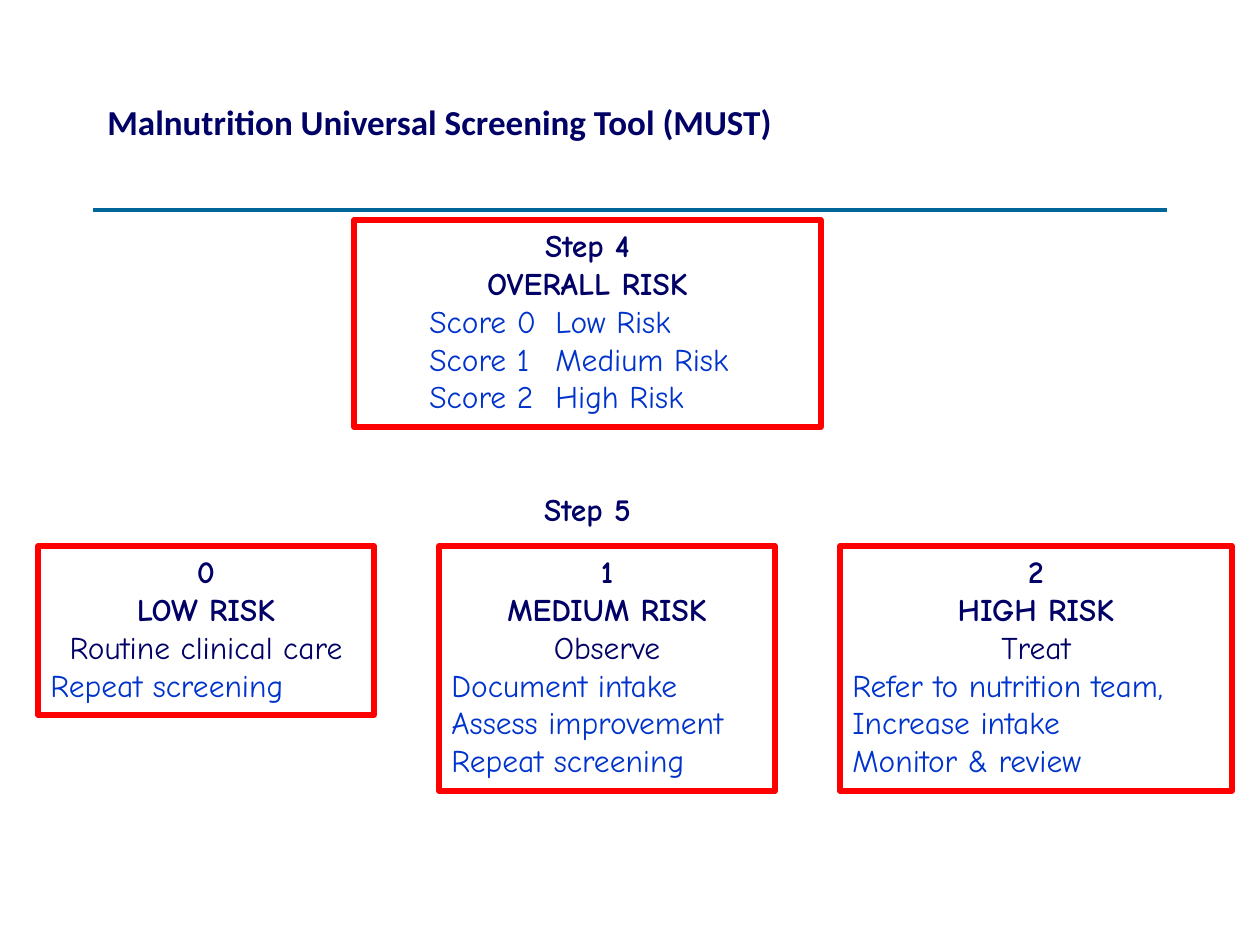
from lxml.etree import SubElement
from pptx import Presentation
from pptx.dml.color import RGBColor
from pptx.enum.shapes import MSO_CONNECTOR, MSO_SHAPE
from pptx.enum.text import MSO_ANCHOR, MSO_AUTO_SIZE, PP_ALIGN
from pptx.oxml.ns import qn
from pptx.util import Emu, Inches, Pt

NAVY, BLUE, RED, TEAL, WHITE = "000066", "0033CC", "FF0000", "006699", "FFFFFF"
PX_PER_INCH = 126
LINE_HEIGHT, BOX_MARGIN = 38, 17


def px(length):
    return Emu(round(length * Inches(1) / PX_PER_INCH))


def color(hex_code):
    return RGBColor.from_string(hex_code)


class RiskSlide:
    heading_font = "Calibri"
    body_font = "Comic Neue"
    body_size = 18

    def __init__(self, slide):
        self.shapes = slide.shapes

    def style(self, paragraph, font, size, hex_code, bold):
        for run in paragraph.runs:
            run.font.name = font
            run.font.size = Pt(size)
            run.font.bold = bold
            run.font.color.rgb = color(hex_code)

    def rule(self, left, right, y):
        line = self.shapes.add_connector(
            MSO_CONNECTOR.STRAIGHT, px(left), px(y), px(right), px(y))
        line.line.color.rgb = color(TEAL)
        line.line.width = Pt(2.25)
        SubElement(line._element.spPr, qn("a:effectLst"))

    def label(self, text, left, top, width, height, font, size, align):
        frame = self.shapes.add_textbox(
            px(left), px(top), px(width), px(height)).text_frame
        frame.word_wrap = True
        frame.vertical_anchor = MSO_ANCHOR.MIDDLE
        frame.text = text
        frame.paragraphs[0].alignment = align
        self.style(frame.paragraphs[0], font, size, NAVY, True)

    def box(self, left, top, width, line_count, headings, summary, details,
            indent=0):
        """Red-framed box: bold headings, centred summary, blue details."""
        box = self.shapes.add_shape(
            MSO_SHAPE.RECTANGLE, px(left), px(top), px(width),
            px(line_count * LINE_HEIGHT + BOX_MARGIN))
        box.shadow.inherit = False
        box.fill.solid()
        box.fill.fore_color.rgb = color(WHITE)
        box.line.color.rgb = color(RED)
        box.line.width = Pt(3)

        frame = box.text_frame
        frame.word_wrap = True
        frame.auto_size = MSO_AUTO_SIZE.SHAPE_TO_FIT_TEXT
        frame.vertical_anchor = MSO_ANCHOR.TOP
        frame.text = "\n".join(headings + summary + details)
        detail_start = len(headings) + len(summary)
        for index, paragraph in enumerate(frame.paragraphs):
            is_detail = index >= detail_start
            paragraph.alignment = PP_ALIGN.LEFT if is_detail else PP_ALIGN.CENTER
            if is_detail and indent:
                paragraph.level = 1
                properties = paragraph._p.get_or_add_pPr()
                properties.set("marL", str(px(indent)))
                properties.set("indent", "0")
            self.style(paragraph, self.body_font, self.body_size,
                       BLUE if is_detail else NAVY, index < len(headings))


def main():
    presentation = Presentation()
    presentation.slide_width = px(1260)
    presentation.slide_height = px(945)
    risk = RiskSlide(
        presentation.slides.add_slide(presentation.slide_layouts[6]))

    # Title and rule
    risk.rule(93, 1167, 210)
    risk.label("Malnutrition Universal Screening Tool (MUST)",
               95, 32, 1070, 179, risk.heading_font, 20, PP_ALIGN.LEFT)

    # Step 4: overall risk
    risk.box(354, 220, 467, 5, ["Step 4", "OVERALL RISK"], [],
             ["Score 0 \tLow Risk", "Score 1\tMedium Risk",
              "Score 2 \tHigh Risk"], indent=63)

    # Step 5: action for each risk level
    actions = [
        (336, 4, "LOW RISK", "Routine clinical care", ["Repeat screening"]),
        (336, 6, "MEDIUM RISK", "Observe",
         ["Document intake", "Assess improvement", "Repeat screening"]),
        (392, 6, "HIGH RISK", "Treat",
         ["Refer to nutrition team, Increase intake", "Monitor & review"]),
    ]
    left, gap = 38, 65
    for score, (width, line_count, level, summary, details) in enumerate(actions):
        risk.box(left, 546, width, line_count, [str(score), level],
                 [summary], details)
        left += width + gap
    risk.label("Step 5", 466, 483, 243, 51,
               risk.body_font, risk.body_size, PP_ALIGN.CENTER)

    presentation.save("out.pptx")


if __name__ == "__main__":
    main()
